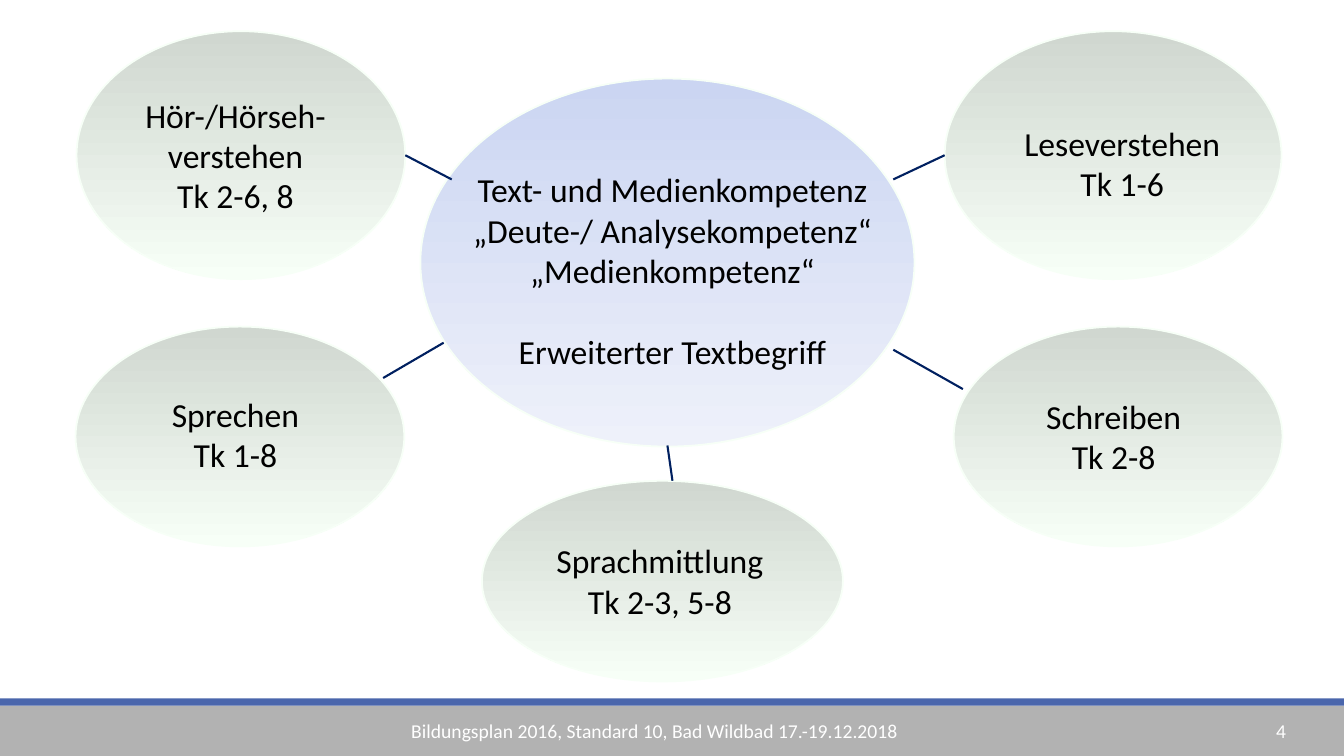
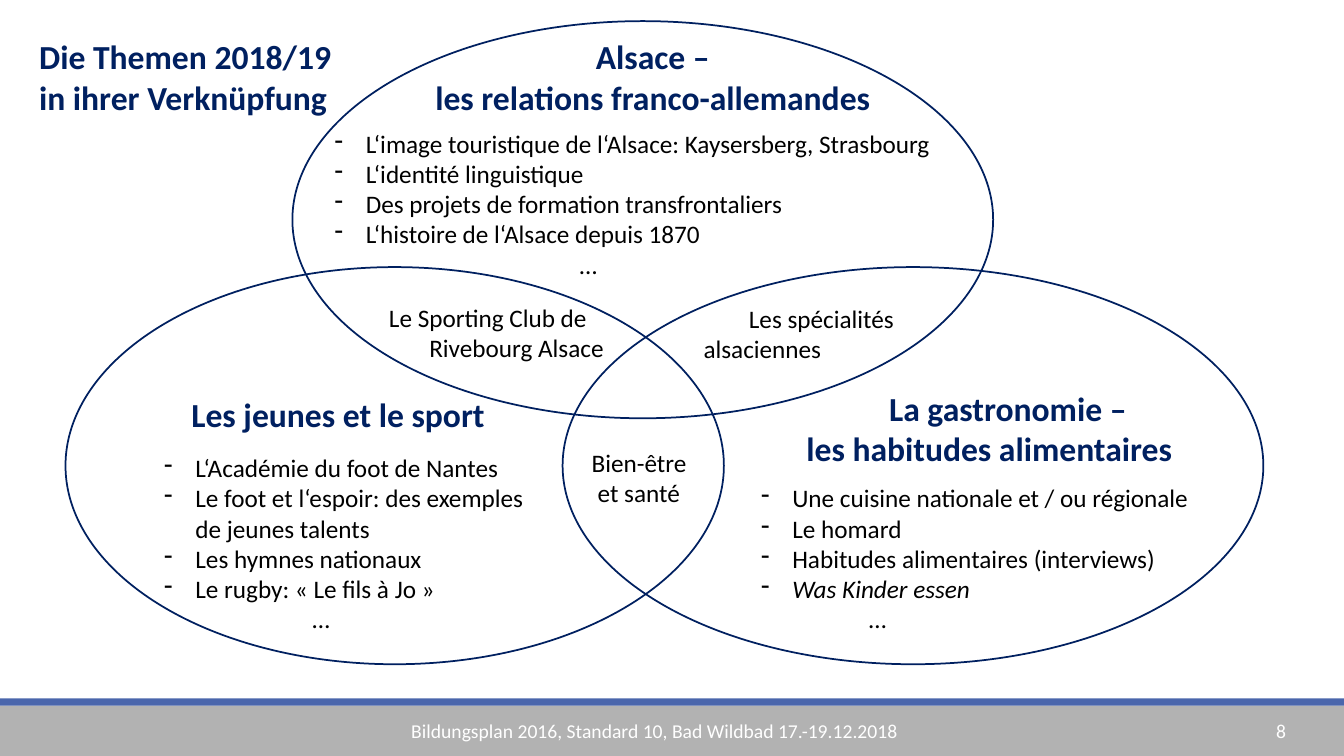
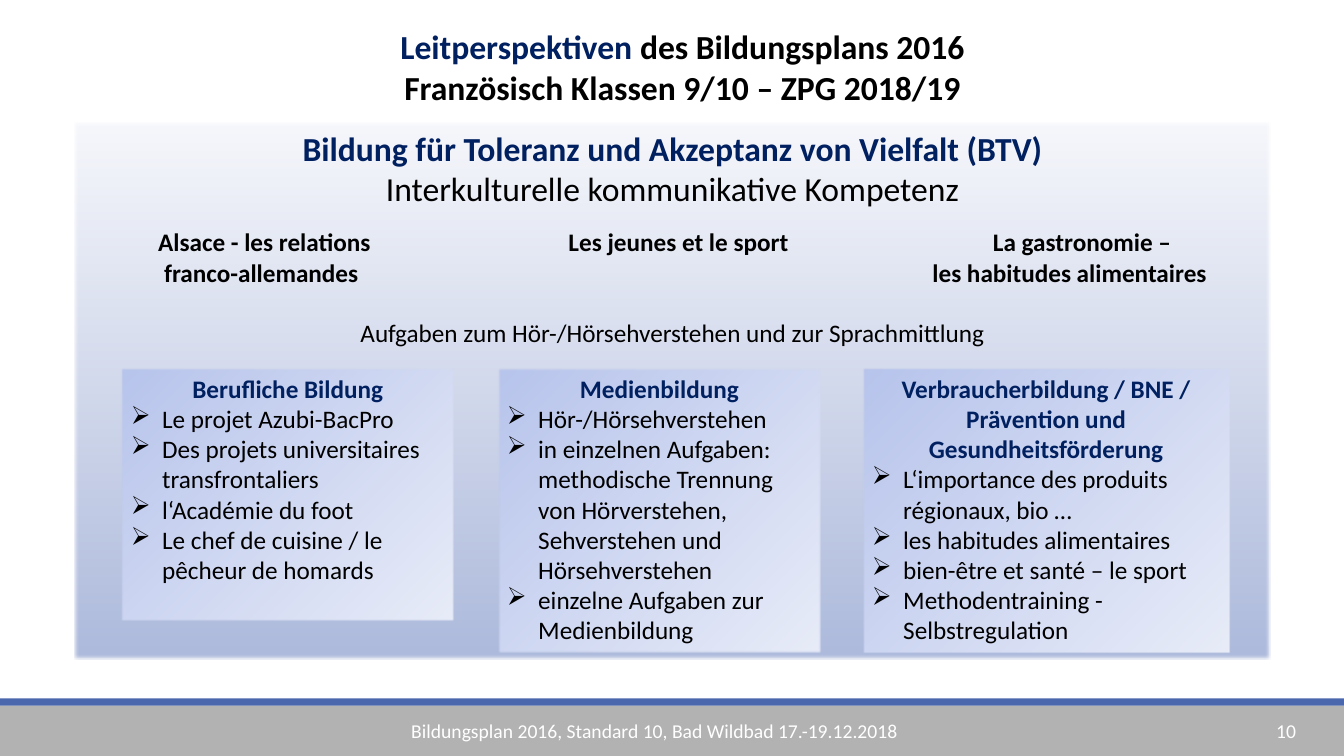
from dataclasses import dataclass
from typing import NamedTuple

from lxml import etree
from pptx import Presentation
from pptx.dml.color import RGBColor
from pptx.enum.shapes import MSO_CONNECTOR, MSO_SHAPE
from pptx.enum.text import MSO_ANCHOR, PP_ALIGN
from pptx.oxml.ns import qn
from pptx.shapes.autoshape import Shape
from pptx.slide import Slide
from pptx.util import Inches, Pt

CENTER, LEFT = PP_ALIGN.CENTER, PP_ALIGN.LEFT
TOP = MSO_ANCHOR.TOP
OVAL, RECTANGLE = MSO_SHAPE.OVAL, MSO_SHAPE.RECTANGLE
STRAIGHT = MSO_CONNECTOR.STRAIGHT

FONT = "Calibri"
FOOTER = "Bildungsplan 2016, Standard 10, Bad Wildbad 17.-19.12.2018"
HANGING = 0.31
COLORS = {
    "navy": "002060",
    "black": "000000",
    "white": "FFFFFF",
    "band": "B2B2B2",
    "stripe": "4A66AC",
    "outline": "F7FFF7",
    "green_top": "D0D7D0",
    "green_bottom": "F7FFF7",
    "blue_top": "CBD5F2",
    "blue_bottom": "EEF1FA",
    "panel_top": "F6F7FB",
    "panel_bottom": "ACB9DB",
    "card_start": "B6C3EB",
    "card_end": "E8ECF8",
}


class Box(NamedTuple):
    left: float
    top: float
    width: float
    height: float


class Gradient(NamedTuple):
    start: str
    end: str
    angle: int


class Segment(NamedTuple):
    x1: float
    y1: float
    x2: float
    y2: float


@dataclass
class Line:
    text: str
    size: int = 18
    color: str = "black"
    bold: bool = False
    italic: bool = False
    align: PP_ALIGN = LEFT
    indent: float = 0
    bullet: str = ""
    space_before: int = 0
    lead: str = ""


@dataclass
class TextBlock:
    box: Box
    lines: list[Line]


@dataclass
class Competence:
    oval: Box
    label: TextBlock


@dataclass
class Card:
    box: Box
    heading: str
    items: list[str]


GREEN = Gradient("green_top", "green_bottom", 270)
BLUE = Gradient("blue_top", "blue_bottom", 270)
PANEL = Gradient("panel_top", "panel_bottom", 270)
CARD = Gradient("card_start", "card_end", 315)


def rgb(name: str) -> RGBColor:
    return RGBColor.from_string(COLORS[name])


def inches(values: tuple) -> list:
    return [Inches(value) for value in values]


def centered(*texts: str) -> list[Line]:
    return [Line(text, 24, align=CENTER) for text in texts]


def heading(text: str, size: int = 24, align: PP_ALIGN = LEFT, indent: float = 0) -> Line:
    return Line(text, size, "navy", True, align=align, indent=indent)


def bullets(symbol: str, texts: list[str]) -> list[Line]:
    return [Line(text, indent=HANGING, bullet=symbol) for text in texts]


def write_lines(shape: Shape, lines: list[Line]) -> None:
    frame = shape.text_frame
    frame.word_wrap = True
    frame.vertical_anchor = TOP
    for index, line in enumerate(lines):
        paragraph = frame.paragraphs[0] if index == 0 else frame.add_paragraph()
        paragraph.alignment = line.align
        properties = paragraph._p.get_or_add_pPr()
        if line.indent:
            properties.set("marL", str(Inches(line.indent)))
        if line.bullet:
            properties.set("indent", str(-Inches(line.indent)))
            etree.SubElement(properties, qn("a:buChar")).set("char", line.bullet)
        if line.space_before:
            paragraph.space_before = Pt(line.space_before)
        font = paragraph.font
        font.name = FONT
        font.size = Pt(line.size)
        font.bold = line.bold
        font.italic = line.italic
        font.color.rgb = rgb(line.color)
        if line.lead:
            run = paragraph.add_run()
            run.text = line.lead
            run.font.color.rgb = rgb("navy")
        paragraph.add_run().text = line.text


def add_text(slide: Slide, block: TextBlock) -> None:
    write_lines(slide.shapes.add_textbox(*inches(block.box)), block.lines)


def add_figure(
    slide: Slide,
    kind: MSO_SHAPE,
    box: Box,
    fill: str | Gradient | None = None,
    outline: str | None = None,
) -> Shape:
    shape = slide.shapes.add_shape(kind, *inches(box))
    shape.shadow.inherit = False
    if isinstance(fill, Gradient):
        shape.fill.gradient()
        shape.fill.gradient_angle = fill.angle
        for stop, color in zip(shape.fill.gradient_stops, (fill.start, fill.end)):
            stop.color.rgb = rgb(color)
    elif fill:
        shape.fill.solid()
        shape.fill.fore_color.rgb = rgb(fill)
    else:
        shape.fill.background()
    if outline:
        shape.line.color.rgb = rgb(outline)
        shape.line.width = Pt(1.25)
    else:
        shape.line.fill.background()
    return shape


def add_soft_panel(slide: Slide, box: Box, fill: Gradient, lines: list[Line]) -> None:
    shape = add_figure(slide, RECTANGLE, box, fill)
    effects = shape._element.spPr.find(qn("a:effectLst"))
    etree.SubElement(effects, qn("a:softEdge")).set("rad", str(Pt(1)))
    write_lines(shape, lines)


def add_link(slide: Slide, segment: Segment) -> None:
    connector = slide.shapes.add_connector(STRAIGHT, *inches(segment))
    connector.line.color.rgb = rgb("navy")
    connector.line.width = Pt(1.5)
    etree.SubElement(connector._element.spPr, qn("a:effectLst"))


def add_base_slide(presentation: Presentation, number: int) -> Slide:
    slide = presentation.slides.add_slide(presentation.slide_layouts[6])
    add_figure(slide, RECTANGLE, Box(0, 7, 13.33, 0.5), "band")
    add_figure(slide, RECTANGLE, Box(0, 6.93, 13.33, 0.07), "stripe")
    for box, text in (
        (Box(3.98, 7.08, 5.36, 0.34), FOOTER),
        (Box(12.56, 7.08, 0.77, 0.34), str(number)),
    ):
        add_text(slide, TextBlock(box, [Line(text, 14, "white")]))
    return slide


def build_competences(presentation: Presentation) -> None:
    slide = add_base_slide(presentation, 4)
    add_figure(slide, OVAL, Box(4.17, 0.78, 4.9, 3.65), BLUE, "outline")
    center_lines = centered(
        "Text- und Medienkompetenz",
        "„Deute-/ Analysekompetenz“",
        "„Medienkompetenz“",
        "Erweiterter Textbegriff",
    )
    center_lines[-1].space_before = 29
    add_text(slide, TextBlock(Box(4.48, 1.63, 4.38, 2.12), center_lines))

    competences = [
        Competence(
            Box(0.76, 0.31, 3.26, 2.46),
            TextBlock(Box(0.99, 0.89, 2.69, 1.31), centered("Hör-/Hörseh- verstehen", "Tk 2-6, 8")),
        ),
        Competence(
            Box(9.37, 0.31, 3.34, 2.46),
            TextBlock(Box(10.04, 1.17, 2.18, 0.91), centered("Leseverstehen", "Tk 1-6")),
        ),
        Competence(
            Box(0.75, 3.24, 3.26, 2.18),
            TextBlock(Box(1.43, 3.86, 1.81, 0.91), centered("Sprechen", "Tk 1-8")),
        ),
        Competence(
            Box(9.46, 3.24, 3.26, 2.18),
            TextBlock(Box(10.04, 3.88, 2.01, 0.91), centered("Schreiben", "Tk 2-8")),
        ),
        Competence(
            Box(4.78, 4.77, 3.58, 1.99),
            TextBlock(Box(5.38, 5.31, 2.33, 0.91), centered("Sprachmittlung", "Tk 2-3, 5-8")),
        ),
    ]
    for competence in competences:
        add_figure(slide, OVAL, competence.oval, GREEN, "outline")
        add_text(slide, competence.label)

    for segment in (
        Segment(4.02, 1.54, 4.48, 1.78),
        Segment(9.37, 1.54, 8.86, 1.78),
        Segment(3.8, 3.75, 4.4, 3.4),
        Segment(8.86, 3.47, 9.55, 3.86),
        Segment(6.62, 4.42, 6.67, 4.77),
    ):
        add_link(slide, segment)


def build_themes(presentation: Presentation) -> None:
    slide = add_base_slide(presentation, 8)
    for oval in (
        Box(0.65, 2.65, 6.53, 3.94),
        Box(5.58, 2.65, 6.95, 3.94),
        Box(2.9, 0.21, 6.95, 3.94),
    ):
        add_figure(slide, OVAL, oval, outline="navy")

    alsace = bullets("-", [
        "L‘image touristique de l‘Alsace: Kaysersberg, Strasbourg",
        "L‘identité linguistique",
        "Des projets de formation transfrontaliers",
        "L‘histoire de l‘Alsace depuis 1870",
    ])
    sport = bullets("-", [
        "L‘Académie du foot de Nantes",
        "Le foot et l‘espoir: des exemples de jeunes talents",
        "Les hymnes nationaux",
        "Le rugby: « Le fils à Jo »",
    ])
    food = bullets("-", [
        "Une cuisine nationale et / ou régionale",
        "Le homard",
        "Habitudes alimentaires (interviews)",
        "Was Kinder essen",
    ])
    food[-1].italic = True

    blocks = [
        TextBlock(Box(0.29, 0.31, 3.26, 0.91), [heading("Die Themen 2018/19 in ihrer Verknüpfung")]),
        TextBlock(Box(4.18, 0.31, 4.59, 0.91), [
            heading("Alsace –", align=CENTER),
            heading("les relations franco-allemandes", align=CENTER),
        ]),
        TextBlock(Box(3.22, 1.22, 6.51, 1.62), alsace + [Line("…", indent=2.43)]),
        TextBlock(Box(1.8, 3.86, 3.23, 0.5), [heading("Les jeunes et le sport")]),
        TextBlock(Box(1.53, 4.44, 3.88, 1.92), sport + [Line("…", indent=1.47)]),
        TextBlock(Box(7.9, 3.8, 3.91, 0.91), [
            heading("La gastronomie –", indent=0.82),
            heading("les habitudes alimentaires"),
        ]),
        TextBlock(Box(7.45, 4.74, 4.78, 1.92), food + [Line("…", indent=1.07)]),
        TextBlock(Box(3.76, 2.95, 3.13, 0.71), [
            Line("Le Sporting Club de"),
            Line("Rivebourg Alsace", indent=0.4),
        ]),
        TextBlock(Box(6.6, 2.96, 3.06, 0.71), [
            Line("Les spécialités", indent=0.73),
            Line("alsaciennes", indent=0.28),
        ]),
        TextBlock(Box(5.77, 4.39, 1.21, 0.71), [
            Line("Bien-être"),
            Line("et santé", indent=0.06),
        ]),
    ]
    for block in blocks:
        add_text(slide, block)


def build_perspectives(presentation: Presentation) -> None:
    slide = add_base_slide(presentation, 10)
    add_text(slide, TextBlock(Box(1.1, 0.21, 11.34, 0.91), [
        Line("des Bildungsplans 2016", 24, bold=True, align=CENTER, lead="Leitperspektiven "),
        Line("Französisch Klassen 9/10 – ZPG 2018/19", 24, bold=True, align=CENTER),
    ]))
    add_soft_panel(slide, Box(0.74, 1.22, 11.86, 5.32), PANEL, [
        heading("Bildung für Toleranz und Akzeptanz von Vielfalt (BTV)", align=CENTER),
        *centered("Interkulturelle kommunikative Kompetenz"),
    ])

    themes = [
        TextBlock(Box(1.47, 2.2, 3, 0.71), [
            Line("Alsace - les relations", bold=True),
            Line("franco-allemandes", bold=True, indent=0.06),
        ]),
        TextBlock(Box(5.54, 2.2, 3, 0.4), [Line("Les jeunes et le sport", bold=True)]),
        TextBlock(Box(9.15, 2.2, 3.2, 0.71), [
            Line("La gastronomie –", bold=True, indent=0.6),
            Line("les habitudes alimentaires", bold=True),
        ]),
        TextBlock(Box(0.74, 3.1, 11.86, 0.4), [
            Line("Aufgaben zum Hör-/Hörsehverstehen und zur Sprachmittlung", align=CENTER),
        ]),
    ]
    for theme in themes:
        add_text(slide, theme)

    cards = [
        Card(Box(1.2, 3.65, 3.31, 2.52), "Berufliche Bildung", [
            "Le projet Azubi-BacPro",
            "Des projets universitaires transfrontaliers",
            "l‘Académie du foot",
            "Le chef de cuisine / le pêcheur de homards",
        ]),
        Card(Box(4.93, 3.65, 3.22, 2.83), "Medienbildung", [
            "Hör-/Hörsehverstehen",
            "in einzelnen Aufgaben: methodische Trennung von Hörverstehen, "
            "Sehverstehen und Hörsehverstehen",
            "einzelne Aufgaben zur Medienbildung",
        ]),
        Card(
            Box(8.55, 3.65, 3.65, 2.83),
            "Verbraucherbildung / BNE / Prävention und Gesundheitsförderung",
            [
                "L‘importance des produits régionaux, bio …",
                "les habitudes alimentaires",
                "bien-être et santé – le sport",
                "Methodentraining - Selbstregulation",
            ],
        ),
    ]
    for card in cards:
        title = heading(card.heading, 18, CENTER)
        add_soft_panel(slide, card.box, CARD, [title, *bullets("➢", card.items)])


def main() -> None:
    presentation = Presentation()
    presentation.slide_width = Inches(13.33)
    presentation.slide_height = Inches(7.5)
    build_competences(presentation)
    build_themes(presentation)
    build_perspectives(presentation)
    presentation.save("out.pptx")


if __name__ == "__main__":
    main()
